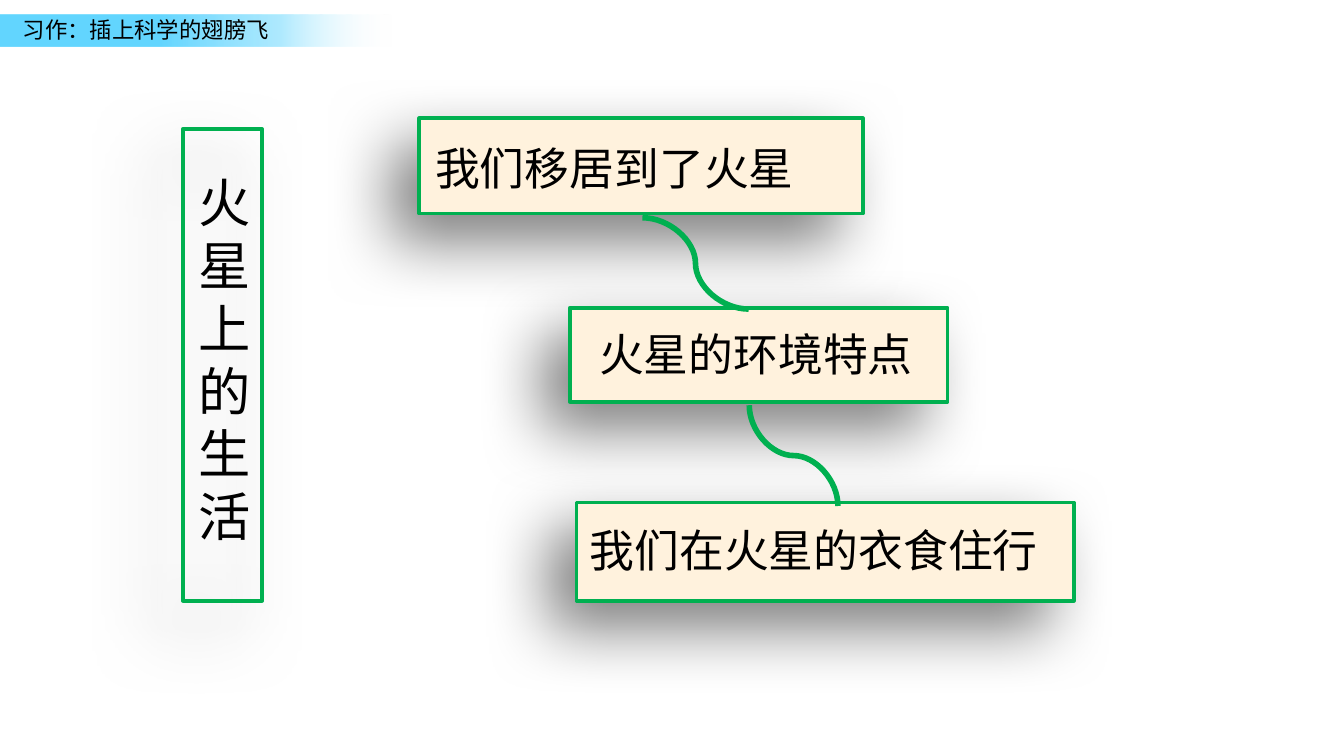
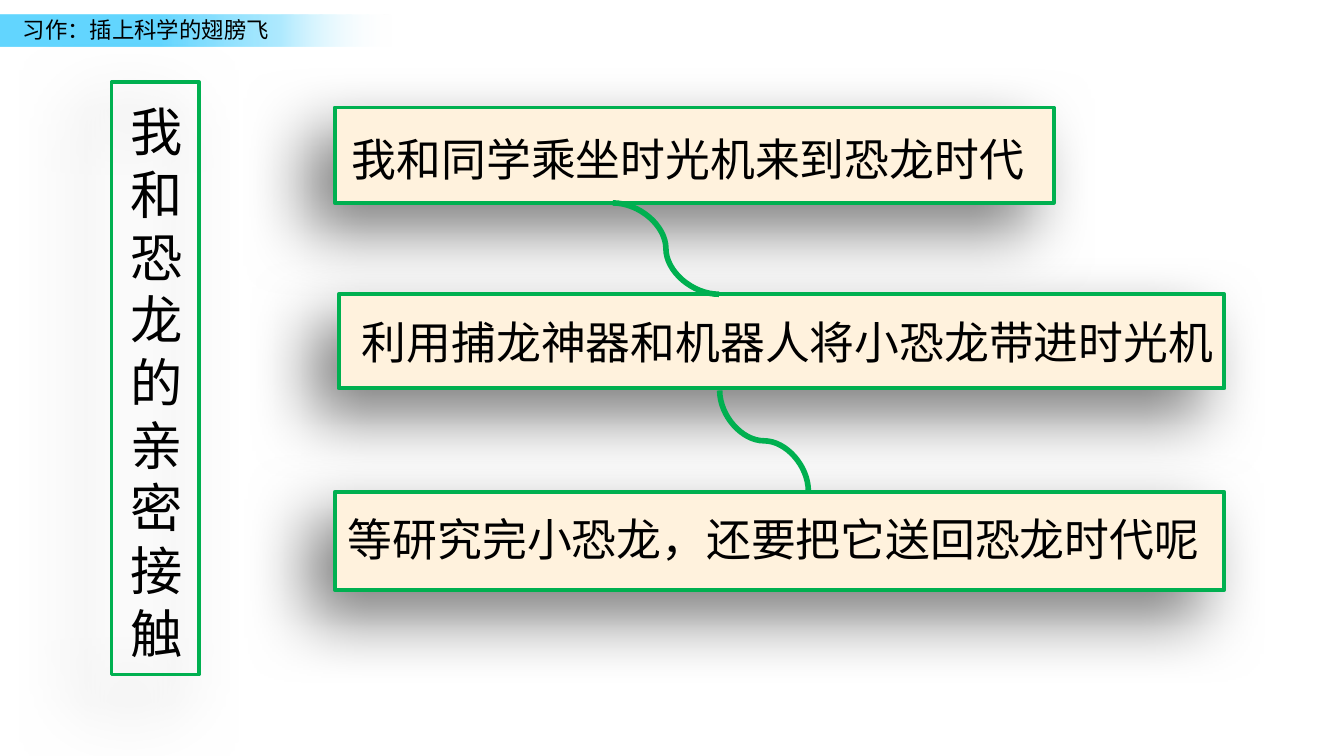
import dataclasses

import lxml.etree
import pptx
import pptx.dml.color
import pptx.enum.shapes
import pptx.enum.text
import pptx.oxml.ns
import pptx.util

Inches = pptx.util.Inches
Pt = pptx.util.Pt
RGBColor = pptx.dml.color.RGBColor
ALIGN = pptx.enum.text.PP_ALIGN
RECTANGLE = pptx.enum.shapes.MSO_SHAPE.RECTANGLE
CURVE = pptx.enum.shapes.MSO_CONNECTOR.CURVE
qn = pptx.oxml.ns.qn

FONT = "Noto Sans CJK SC"
BLACK = RGBColor(0x00, 0x00, 0x00)
GREEN = RGBColor(0x00, 0xB0, 0x50)
CREAM = RGBColor(0xFF, 0xF2, 0xDD)
SKY = RGBColor(0x63, 0xD6, 0xFF)
PALE_SKY = RGBColor(0x97, 0xE4, 0xFF)
WHITE = RGBColor(0xFF, 0xFF, 0xFF)

BANNER_TEXT = "习作：插上科学的翅膀飞"
BANNER_STOPS = ((40, SKY, 100), (70, PALE_SKY, 76), (97, WHITE, 0))
LINE_HEIGHT = 1.2


@dataclasses.dataclass
class Step:
    """One box of the story; text_box is left, top and width inside the box."""
    text: str
    box: tuple
    text_box: tuple
    align: ALIGN = ALIGN.LEFT


def lengths(box):
    return [Inches(value) for value in box]


def write(shape, text, size, align=ALIGN.LEFT, wrap=True):
    frame = shape.text_frame
    frame.word_wrap = wrap
    frame.auto_size = pptx.enum.text.MSO_AUTO_SIZE.SHAPE_TO_FIT_TEXT
    frame.vertical_anchor = pptx.enum.text.MSO_ANCHOR.TOP
    frame.margin_left = frame.margin_right = Inches(0.1)
    frame.margin_top = frame.margin_bottom = Inches(0.05)
    paragraph = frame.paragraphs[0]
    paragraph.alignment = align
    paragraph.line_spacing = Pt(LINE_HEIGHT * size)
    run = paragraph.add_run()
    run.text = text
    run.font.size = Pt(size)
    run.font.name = FONT
    run.font.color.rgb = BLACK
    east_asian = lxml.etree.SubElement(run.font._element, qn("a:ea"))
    east_asian.set("typeface", FONT)


def add_color(parent, color, opacity):
    element = lxml.etree.SubElement(parent, qn("a:srgbClr"), val=str(color))
    if opacity < 100:
        lxml.etree.SubElement(element, qn("a:alpha"), val=str(opacity * 1000))


def add_frame(shapes, box, fill=None):
    """Green outlined rectangle with a soft shadow to the lower left."""
    shape = shapes.add_shape(RECTANGLE, *lengths(box))
    if fill is None:
        shape.fill.background()
    else:
        shape.fill.solid()
        shape.fill.fore_color.rgb = fill
    shape.line.color.rgb = GREEN
    shape.line.width = Pt(2)
    shape.shadow.inherit = False
    effects = shape._element.spPr.find(qn("a:effectLst"))
    shadow = lxml.etree.SubElement(
        effects, qn("a:outerShdw"), blurRad=str(Pt(35)), dist=str(Pt(20)),
        dir=str(135 * 60000), algn="tr", rotWithShape="0")
    add_color(shadow, BLACK, 50)


def add_banner(slide):
    band = slide.shapes.add_shape(RECTANGLE, *lengths((-0.03, 0.11, 3.03, 0.24)))
    band.shadow.inherit = False
    band.line.fill.background()
    band.fill.gradient()
    band.fill.gradient_angle = 0
    stops = band._element.spPr.find(qn("a:gradFill")).find(qn("a:gsLst"))
    for stop in list(stops):
        stops.remove(stop)
    for position, color, opacity in BANNER_STOPS:
        stop = lxml.etree.SubElement(stops, qn("a:gs"), pos=str(position * 1000))
        add_color(stop, color, opacity)
    label = slide.shapes.add_textbox(*lengths((0.07, 0.07, 2.05, 0.3)))
    write(label, BANNER_TEXT, 12, wrap=False)


def add_title(slide, text, box, text_box, align):
    """Title read downwards: the box is one character wide."""
    add_frame(slide.shapes, box)
    title = slide.shapes.title
    title.left, title.top, title.width, title.height = lengths(text_box)
    write(title, text, 28, align)


def add_step(slide, step):
    group = slide.shapes.add_group_shape()
    add_frame(group.shapes, step.box, CREAM)
    left, top, width = step.text_box
    label = group.shapes.add_textbox(
        *lengths((step.box[0] + left, step.box[1] + top, width, 0.5)))
    write(label, step.text, 24, step.align)


def add_curve(slide, begin, end):
    curve = slide.shapes.add_connector(CURVE, *lengths(begin + end))
    curve.line.color.rgb = GREEN
    curve.line.width = Pt(3)
    lxml.etree.SubElement(curve._element.spPr, qn("a:effectLst"))
    return curve


def add_curves(slide, left, top):
    """Two curves in a row: the first leaves sideways, the second downwards."""
    middle = left + 0.79
    add_curve(slide, (left, top), (middle, top + 0.68))
    right_edge, upper_edge = middle + 0.71, top + 1.44
    turned = add_curve(slide, (right_edge, upper_edge),
                       (right_edge - 0.75, upper_edge + 0.66))
    turned._element.spPr.find(qn("a:xfrm")).set("rot", str(270 * 60000))


def add_story_slide(presentation, title, title_box, title_text_box, title_align,
                    steps, curves_at):
    slide = presentation.slides.add_slide(presentation.slide_layouts[5])
    add_banner(slide)
    add_title(slide, title, title_box, title_text_box, title_align)
    for step in steps:
        add_step(slide, step)
    add_curves(slide, *curves_at)


def main():
    presentation = pptx.Presentation()
    presentation.slide_width = Inches(10)
    presentation.slide_height = Inches(10 * 9 / 16)
    add_story_slide(
        presentation, "火星上的生活",
        (1.36, 0.96, 0.59, 3.51), (1.34, 1.22, 0.66, 2.93), ALIGN.CENTER,
        [Step("我们移居到了火星", (3.12, 0.88, 3.3, 0.71), (0.02, 0.12, 3.16)),
         Step("火星的环境特点", (4.24, 2.29, 2.81, 0.7), (-0.03, 0.09, 2.83), ALIGN.CENTER),
         Step("我们在火星的衣食住行", (4.29, 3.74, 3.7, 0.73), (0, 0.1, 3.7))],
        (4.78, 1.62))
    add_story_slide(
        presentation, "我和恐龙的亲密接触",
        (0.83, 0.61, 0.65, 4.41), (0.87, 0.69, 0.66, 4.3), ALIGN.LEFT,
        [Step("我和同学乘坐时光机来到恐龙时代", (2.49, 0.8, 5.35, 0.71), (0.03, 0.13, 5.58)),
         Step("利用捕龙神器和机器人将小恐龙带进时光机", (2.52, 2.19, 6.59, 0.7),
              (-0.16, 0.1, 7), ALIGN.CENTER),
         Step("等研究完小恐龙，还要把它送回恐龙时代呢", (2.49, 3.66, 6.62, 0.73),
              (0, 0.1, 6.62))],
        (4.56, 1.51))
    presentation.save("out.pptx")


if __name__ == "__main__":
    main()
